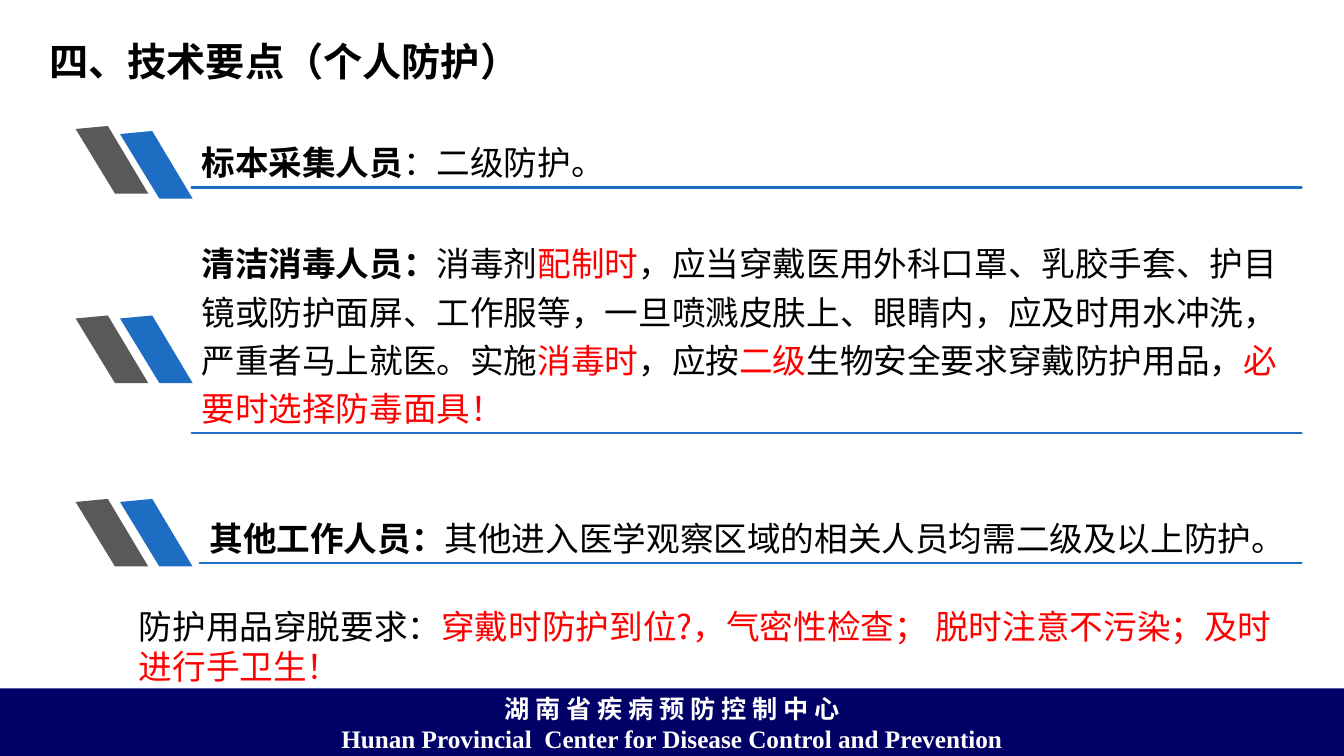
from lxml.etree import SubElement
from pptx import Presentation
from pptx.dml.color import RGBColor
from pptx.enum.shapes import MSO_SHAPE
from pptx.enum.text import MSO_ANCHOR, MSO_AUTO_SIZE, PP_ALIGN
from pptx.oxml.ns import qn
from pptx.util import Emu, Pt

PX = 9144  # EMU per px, 100 px to the inch
CJK_FONT = "Noto Sans CJK SC"
LATIN_FONT = "Times New Roman"
BLACK = RGBColor(0x00, 0x00, 0x00)
WHITE = RGBColor(0xFF, 0xFF, 0xFF)
RED = RGBColor(0xFF, 0x00, 0x00)
GREY = RGBColor(0x59, 0x59, 0x59)
BLUE = RGBColor(0x1D, 0x6D, 0xC2)
NAVY = RGBColor(0x00, 0x00, 0x66)

RULE_RIGHT = 1291
STRIPE = [(107, 0), (147, 67), (114, 67), (75, 3)]
STRIPE_STEP = 44

# Each run is (text, colour, bold).
SAMPLERS = [("标本采集人员", BLACK, True), ("：二级防护。", BLACK, False)]
CLEANERS = [
    ("清洁消毒人员：", BLACK, True),
    ("消毒剂", BLACK, False),
    ("配制时", RED, False),
    ("，应当穿戴医用外科口罩、乳胶手套、护目镜或防护面屏、工作服等，"
     "一旦喷溅皮肤上、眼睛内，应及时用水冲洗，严重者马上就医。实施", BLACK, False),
    ("消毒时", RED, False),
    ("，应按", BLACK, False),
    ("二级", RED, False),
    ("生物安全要求穿戴防护用品，", BLACK, False),
    ("必要时选择防毒面具！", RED, False),
]
OTHERS = [
    ("其他工作人员：", BLACK, True),
    ("其他进入医学观察区域的相关人员均需二级及以上防护。", BLACK, False),
]
DRESSING = [
    ("防护用品穿脱要求：", BLACK, False),
    ("穿戴时防护到位?，气密性检查； 脱时注意不污染；及时进行手卫生！", RED, False),
]
# (left, top, rule, line spacing, grey stripe top, blue stripe top, runs)
SECTIONS = [
    (190, 99, 186, 1.2, 125, 130, SAMPLERS),
    (190, 219, 430, 1.2, 313, 313, CLEANERS),
    (198, 462, 559, 1.5, 495, 495, OTHERS),
]


def px(*lengths):
    return [Emu(length * PX) for length in lengths]


def set_font(paragraph, name, size):
    """Set size and typeface, for East Asian characters too."""
    paragraph.font.size = Pt(size)
    paragraph.font.name = name
    properties = paragraph.font._element
    SubElement(properties, qn("a:ea")).set("typeface", name)


def fill_body_text(frame, runs, line_spacing=None, anchor=MSO_ANCHOR.TOP):
    frame.word_wrap = True
    frame.vertical_anchor = anchor
    paragraph = frame.paragraphs[0]
    paragraph.alignment = PP_ALIGN.LEFT
    set_font(paragraph, CJK_FONT, 24)
    paragraph.line_spacing = line_spacing
    for text, colour, bold in runs:
        run = paragraph.add_run()
        run.text = text
        run.font.color.rgb = colour
        run.font.bold = bold


def add_stripe(slide, offset, top, colour):
    points = [(x + offset, y + top) for x, y in STRIPE]
    builder = slide.shapes.build_freeform(*points[0], scale=PX)
    builder.add_line_segments(points[1:], close=True)
    stripe = builder.convert_to_shape()
    stripe.shadow.inherit = False
    stripe.fill.solid()
    stripe.fill.fore_color.rgb = colour
    stripe.line.fill.background()


def add_ruled_panel(slide, left, top, rule):
    """Add an outline of a bottom rule and a dot at the top left corner."""
    builder = slide.shapes.build_freeform(left, rule, scale=PX)
    builder.add_line_segments([(RULE_RIGHT, rule), (left, rule)], close=True)
    builder.move_to(left, top)
    builder.add_line_segments([(left, top)], close=True)
    panel = builder.convert_to_shape()
    panel.shadow.inherit = False
    panel.fill.background()
    panel.line.color.rgb = BLUE
    panel.line.width = Pt(1.5)
    return panel


def add_section(slide, left, top, rule, line_spacing, grey_top, blue_top, runs):
    add_stripe(slide, 0, grey_top, GREY)
    add_stripe(slide, STRIPE_STEP, blue_top, BLUE)
    panel = add_ruled_panel(slide, left, top, rule)
    fill_body_text(panel.text_frame, runs, line_spacing, MSO_ANCHOR.BOTTOM)


def set_title(slide, text):
    title = slide.shapes.title
    title.left, title.top, title.width, title.height = px(38, 21, 1228, 78)
    frame = title.text_frame
    frame.text = text
    frame.auto_size = MSO_AUTO_SIZE.NONE
    frame.vertical_anchor = MSO_ANCHOR.MIDDLE
    frame.margin_left, frame.margin_right = px(11, 11)
    paragraph = frame.paragraphs[0]
    paragraph.alignment = PP_ALIGN.LEFT
    set_font(paragraph, CJK_FONT, 28)
    paragraph.font.bold = True
    paragraph.font.color.rgb = BLACK


def add_footer(slide):
    banner = slide.shapes.add_shape(MSO_SHAPE.RECTANGLE, *px(0, 683, 1333, 71))
    banner.shadow.inherit = False
    banner.fill.solid()
    banner.fill.fore_color.rgb = NAVY
    banner.line.fill.background()
    frame = banner.text_frame
    frame.vertical_anchor = MSO_ANCHOR.TOP
    frame.text = ("湖 南 省 疾 病 预 防 控 制 中 心\n"
                  "Hunan Provincial  Center for Disease Control and Prevention")
    for paragraph, font in zip(frame.paragraphs, (CJK_FONT, LATIN_FONT)):
        paragraph.alignment = PP_ALIGN.CENTER
        set_font(paragraph, font, 18)
        paragraph.font.bold = True
        paragraph.font.color.rgb = WHITE


def main():
    deck = Presentation()
    deck.slide_width, deck.slide_height = px(1333, 750)
    slide = deck.slides.add_slide(deck.slide_layouts[5])
    add_footer(slide)
    set_title(slide, "四、技术要点（个人防护）")
    for section in SECTIONS:
        add_section(slide, *section)
    dressing = slide.shapes.add_textbox(*px(128, 596, 1154, 91))
    fill_body_text(dressing.text_frame, DRESSING)
    deck.save("out.pptx")


if __name__ == "__main__":
    main()
